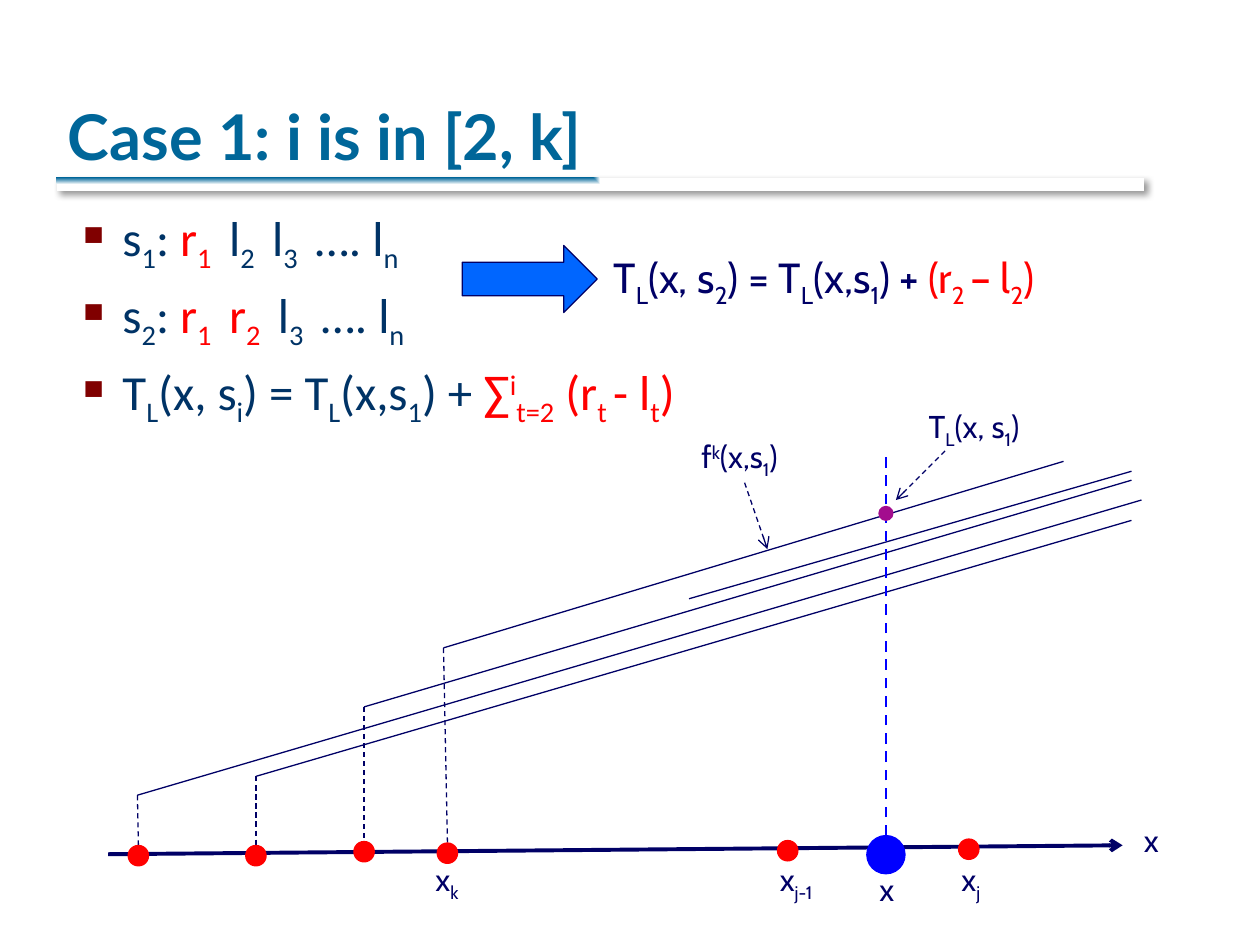
"""Build the slide on case 1, with its bundle of support lines above the x axis."""
from dataclasses import dataclass

from lxml import etree
from pptx import Presentation
from pptx import util as u
from pptx.dml.color import RGBColor
from pptx.enum import dml, shapes, text
from pptx.oxml import parse_xml
from pptx.oxml.ns import nsdecls, qn


@dataclass(frozen=True)
class Theme:
    title: str = "006699"
    body: str = "003366"
    ink: str = "000066"
    accent: str = "FF0000"
    bullet: str = "800000"
    query: str = "0000FF"
    value: str = "A30D8E"
    arrow: str = "0066FF"
    paper: str = "FFFFFF"
    title_font: str = "Lato"
    body_font: str = "Calibri"
    label_font: str = "Cabin"
    title_size: float = 36
    body_size: float = 28
    formula_size: float = 24
    label_size: float = 18
    thin: float = 0.75
    medium: float = 1.5
    thick: float = 2.25


THEME = Theme()
BASELINES = {"_": "-25000", "^": "30000"}

# Spans are split by "|"; "!" marks the accent colour, "_" a subscript, "^" a superscript.
TITLE = "Case 1: i is in [2, k]"
BULLETS = [
    "s|_1|: |!r|!_1 | l|_2 | l|_3 | …. l|_n",
    "s|_2|: |!r|!_1 |! r|!_2 | l|_3 | …. l|_n",
    "T|_L|(x, s|_i|) = T|_L|(x,s|_1|) + |!∑|!^i|!_t=2|! (r|!_t |!- l|!_t|!)",
]
FORMULA = "T|_L|(x, s|_2|) = T|_L|(x,s|_1|) + |!(r|!_2 |!– l|!_2|!)"
LABELS = [
    ("x", 22.81, 16.43, 0.84),
    ("x|_k", 8.53, 17.22, 1.04),
    ("x|_j-1", 15.47, 17.22, 1.27),
    ("x", 17.48, 17.42, 0.84),
    ("x|_j", 19.13, 17.22, 0.91),
    ("f|^k|(x,s|_1|)", 13.89, 8.69, 2.21),
    ("T|_L|(x, s|_1|)", 18.47, 8.08, 2.57),
]
AXIS = ((2.18, 17.22), (22.63, 17.04))
RAYS = [
    ((2.77, 16.03), (23.01, 10.08)),
    ((5.16, 15.65), (22.81, 10.49)),
    ((7.34, 14.25), (22.81, 9.68)),
    ((8.94, 13.06), (21.44, 9.3)),
    ((13.89, 12.07), (22.81, 9.5)),
]
POINTS = [(2.79, 17.25), (5.16, 17.25), (7.34, 17.17), (9.02, 17.2), (15.88, 17.15), (19.53, 17.12)]
DROPPED = 4
QUERY = (17.86, 17.23)
VALUE = (17.86, 10.35)
GUIDE_TOP = 9.09
POINTERS = [((19.05, 9.09), (18.06, 10.08)), ((15.01, 9.73), (15.47, 11.07))]
POINT_SIZE, QUERY_SIZE, VALUE_SIZE = 0.41, 0.77, 0.28


def rgb(colour):
    return RGBColor.from_string(colour)


def add_text(paragraph, markup, font, size, colour, bold=None):
    paragraph.font.name = font
    paragraph.font.size = u.Pt(size)
    paragraph.font.bold = bold
    paragraph.font.color.rgb = rgb(colour)
    for part in markup.split("|"):
        span = paragraph.add_run()
        if part.startswith("!"):
            span.font.color.rgb = rgb(THEME.accent)
            part = part[1:]
        if part[0] in BASELINES:
            span._r.get_or_add_rPr().set("baseline", BASELINES[part[0]])
            part = part[1:]
        span.text = part


def add_box(page, left, top, width, height, wrap=True):
    box = page.shapes.add_textbox(u.Cm(left), u.Cm(top), u.Cm(width), u.Cm(height))
    box.text_frame.word_wrap = wrap
    return box.text_frame


def add_bullet(paragraph):
    properties = paragraph._p.get_or_add_pPr()
    properties.set("marL", str(u.Cm(0.95)))
    properties.set("indent", str(u.Cm(-0.95)))
    colour = etree.SubElement(properties, qn("a:buClr"))
    etree.SubElement(colour, qn("a:srgbClr"), val=THEME.bullet)
    etree.SubElement(properties, qn("a:buChar"), char="▪")


def add_shape(page, kind, left, top, width, height, fill, line):
    shape = page.shapes.add_shape(kind, u.Cm(left), u.Cm(top), u.Cm(width), u.Cm(height))
    shape.shadow.inherit = False
    shape.fill.solid()
    shape.fill.fore_color.rgb = rgb(fill)
    shape.line.color.rgb = rgb(line)
    shape.line.width = u.Pt(THEME.thin)
    return shape


def add_dot(page, centre, size, colour):
    left, top = (value - size / 2 for value in centre)
    add_shape(page, shapes.MSO_SHAPE.OVAL, left, top, size, size, colour, colour)


def add_line(page, start, end, colour=THEME.ink, width=THEME.thin, dashed=False, arrow=False):
    ends = [u.Cm(value) for value in (*start, *end)]
    line = page.shapes.add_connector(shapes.MSO_CONNECTOR.STRAIGHT, *ends)
    line.line.color.rgb = rgb(colour)
    line.line.width = u.Pt(width)
    if dashed:
        line.line.dash_style = dml.MSO_LINE.DASH
    if arrow:
        etree.SubElement(line.line._get_or_add_ln(), qn("a:tailEnd"), type="arrow")
    etree.SubElement(line._element.spPr, qn("a:effectLst"))


def add_rule(page):
    rule = add_shape(page, shapes.MSO_SHAPE.RECTANGLE, 1.14, 3.58, 21.92, 0.28, THEME.paper, THEME.paper)
    rule.line.fill.background()
    rule.fill.gradient()
    for stop, colour, position in zip(rule.fill.gradient_stops, (THEME.title, THEME.paper), (0, 1)):
        stop.color.rgb = rgb(colour)
        stop.position = position
    properties = rule._element.spPr
    gradient = properties.find(qn("a:gradFill"))
    gradient.replace(gradient.find(qn("a:lin")), parse_xml(
        f'<a:path {nsdecls("a")} path="rect"><a:fillToRect r="100000" b="100000"/></a:path>'))
    properties.find(qn("a:effectLst")).append(parse_xml(
        f'<a:outerShdw {nsdecls("a")} blurRad="{u.Pt(4)}" dist="{u.Pt(3)}" dir="2700000">'
        '<a:srgbClr val="000000"><a:alpha val="40000"/></a:srgbClr></a:outerShdw>'))


def add_words(page):
    title = add_box(page, 1.12, 0.43, 21.59, 3.18)
    title.vertical_anchor = text.MSO_ANCHOR.BOTTOM
    add_text(title.paragraphs[0], TITLE, THEME.title_font, THEME.title_size, THEME.title, True)
    body = add_box(page, 1.27, 4.06, 22.73, 4.67)
    for index, markup in enumerate(BULLETS):
        paragraph = body.add_paragraph() if index else body.paragraphs[0]
        add_bullet(paragraph)
        if index:
            paragraph.space_before = u.Pt(THEME.body_size * 0.2)
        add_text(paragraph, markup, THEME.body_font, THEME.body_size, THEME.body)
    formula = add_box(page, 12.12, 4.95, 10.31, 2.06)
    add_text(formula.paragraphs[0], FORMULA, THEME.label_font, THEME.formula_size, THEME.ink)
    add_shape(page, shapes.MSO_SHAPE.RIGHT_ARROW, 9.32, 4.95, 2.72, 1.35, THEME.arrow, THEME.ink)


def add_diagram(page):
    add_line(page, *AXIS, width=THEME.thick, arrow=True)
    for ray in RAYS:
        add_line(page, *ray)
    for (start, _), (x, y) in zip(RAYS[:DROPPED], POINTS):
        add_line(page, start, (x, y - POINT_SIZE / 2), dashed=True)
    for point in POINTS:
        add_dot(page, point, POINT_SIZE, THEME.accent)
    add_dot(page, QUERY, QUERY_SIZE, THEME.query)
    x, y = QUERY
    add_line(page, (x, y - QUERY_SIZE / 2), (x, GUIDE_TOP), THEME.query, THEME.medium, dashed=True)
    add_dot(page, VALUE, VALUE_SIZE, THEME.value)
    for pointer in POINTERS:
        add_line(page, *pointer, dashed=True, arrow=True)
    for markup, left, top, width in LABELS:
        label = add_box(page, left, top, width, 1.02, wrap=False)
        add_text(label.paragraphs[0], markup, THEME.label_font, THEME.label_size, THEME.ink)


def main():
    deck = Presentation()
    deck.slide_width, deck.slide_height = u.Cm(25.4), u.Cm(19.05)
    page = deck.slides.add_slide(deck.slide_layouts[6])
    add_rule(page)
    add_words(page)
    add_diagram(page)
    deck.save("out.pptx")


if __name__ == "__main__":
    main()
